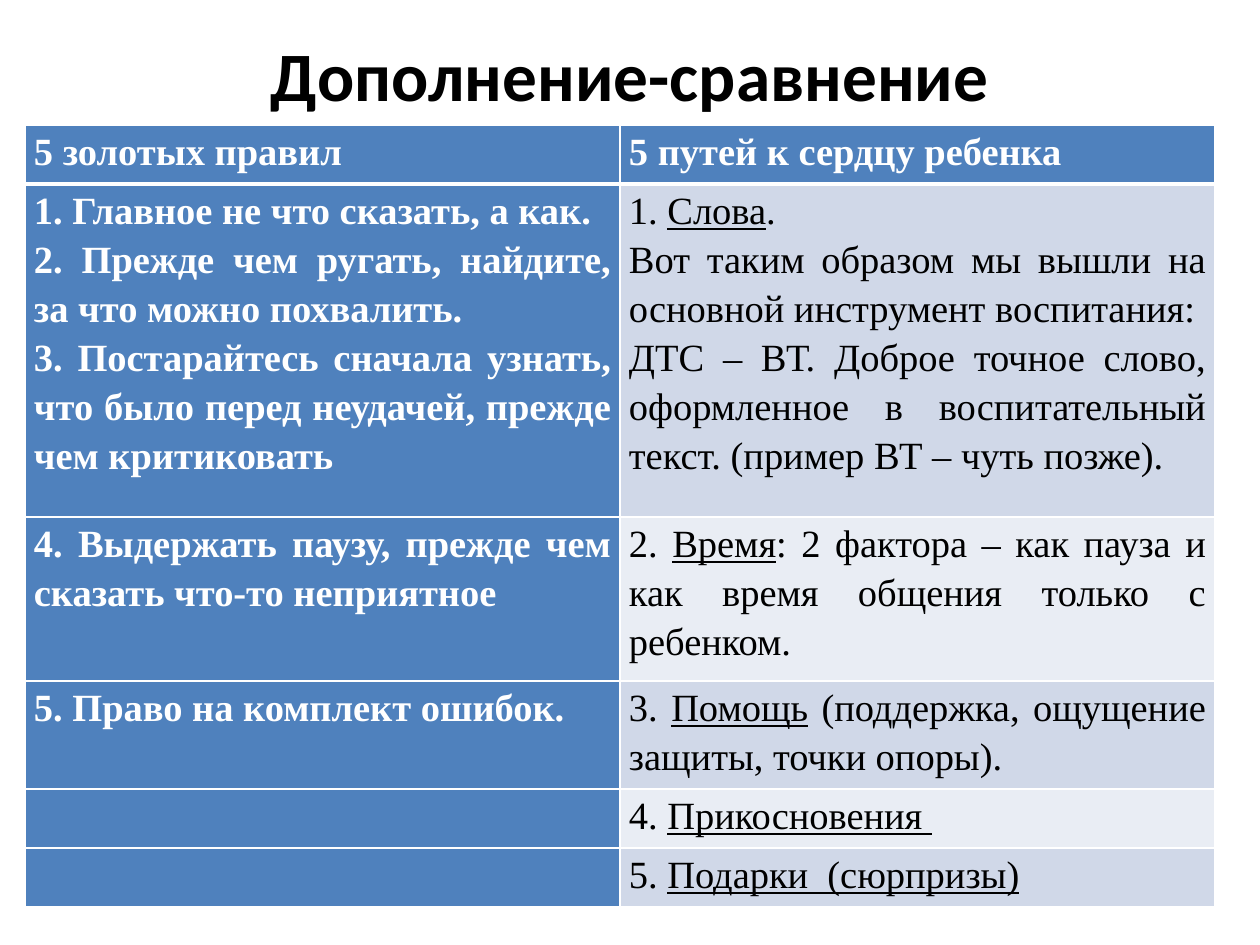
from lxml.etree import SubElement
from pptx import Presentation
from pptx.dml.color import RGBColor
from pptx.enum.text import MSO_ANCHOR, PP_ALIGN as Align
from pptx.oxml.ns import qn
from pptx.util import Pt

PX = 914400 // 126
WHITE = RGBColor(0xFF, 0xFF, 0xFF)
BLACK = RGBColor(0, 0, 0)
BLUE = RGBColor(0x4F, 0x81, 0xBD)
BANDS = RGBColor(0xD0, 0xD8, 0xE8), RGBColor(0xE9, 0xED, 0xF4)

TITLE = "Дополнение-сравнение"
HEADINGS = ["5 золотых правил"], ["5 путей к сердцу ребенка"]
# Underscores enclose underlined words.
COMPARISON = [
    HEADINGS,
    (["1. Главное не что сказать, а как. ",
      "2. Прежде чем ругать, найдите, за что можно похвалить.",
      "3. Постарайтесь сначала узнать, что было перед неудачей, прежде чем критиковать"],
     ["1. _Слова_. ",
      "Вот таким образом мы вышли на основной инструмент воспитания: ",
      "ДТС – ВТ. Доброе точное слово, оформленное в воспитательный текст. (пример ВТ – чуть позже)."]),
    (["4. Выдержать паузу, прежде чем сказать что-то неприятное"],
     ["2. _Время_: 2 фактора – как пауза и как время общения только с ребенком.  "]),
    (["5. Право на комплект ошибок. "],
     ["3. _Помощь_ (поддержка, ощущение защиты, точки опоры)."]),
    ([], ["4. _Прикосновения _"]),
    ([], ["5. _Подарки  (сюрпризы)_"]),
]
ROW_HEIGHTS = [59, 333, 164, 108, 59, 59]
COLUMN_WIDTH = 595


def write(frame, lines, font="Times New Roman", size=22, color=BLACK, bold=False,
          align=Align.JUSTIFY, spacing=1.15):
    for i, line in enumerate(lines):
        paragraph = frame.paragraphs[0] if i == 0 else frame.add_paragraph()
        paragraph.alignment = align
        paragraph.line_spacing = spacing
        for j, words in enumerate(line.split("_")):
            if words:
                run = paragraph.add_run()
                run.text = words
                run.font.name = font
                run.font.size = Pt(size)
                run.font.bold = bold
                run.font.underline = j % 2 == 1
                run.font.color.rgb = color


def draw_border(cell, side, width):
    line = SubElement(cell._tc.get_or_add_tcPr(), qn(f"a:ln{side}"), w=str(Pt(width)))
    SubElement(SubElement(line, qn("a:solidFill")), qn("a:srgbClr"), val=str(WHITE))


def add_comparison(slide):
    table = slide.shapes.add_table(
        len(COMPARISON), 2, 25 * PX, 125 * PX,
        2 * COLUMN_WIDTH * PX, sum(ROW_HEIGHTS) * PX).table
    for column in table.columns:
        column.width = COLUMN_WIDTH * PX
    for r, (row, height) in enumerate(zip(COMPARISON, ROW_HEIGHTS)):
        table.rows[r].height = height * PX
        for c, lines in enumerate(row):
            cell = table.cell(r, c)
            cell.margin_left = cell.margin_right = 9 * PX
            cell.margin_top = cell.margin_bottom = 0
            borders = {"L": 1, "R": 1, "T": 3 if r == 1 else 1, "B": 3 if r == 0 else 1}
            for side, width in borders.items():
                draw_border(cell, side, width)
            strong = r == 0 or c == 0
            cell.fill.solid()
            cell.fill.fore_color.rgb = BLUE if strong else BANDS[(r - 1) % 2]
            write(cell.text_frame, lines, color=WHITE if strong else BLACK, bold=strong)
            if len(lines) > 1 and c == 0:
                cell.text_frame.paragraphs[-1].space_after = Pt(10)


def add_title(slide):
    frame = slide.shapes.add_textbox(63 * PX, 32 * PX, 1134 * PX, 158 * PX).text_frame
    frame.word_wrap = True
    frame.vertical_anchor = MSO_ANCHOR.TOP
    frame.margin_top = frame.margin_bottom = 0
    write(frame, [TITLE], font="Calibri", size=39.6, bold=True,
          align=Align.CENTER, spacing=1.0)


def main():
    deck = Presentation()
    deck.slide_width, deck.slide_height = 1260 * PX, 945 * PX
    slide = deck.slides.add_slide(deck.slide_layouts[6])
    add_comparison(slide)
    add_title(slide)
    deck.save("out.pptx")


if __name__ == "__main__":
    main()
